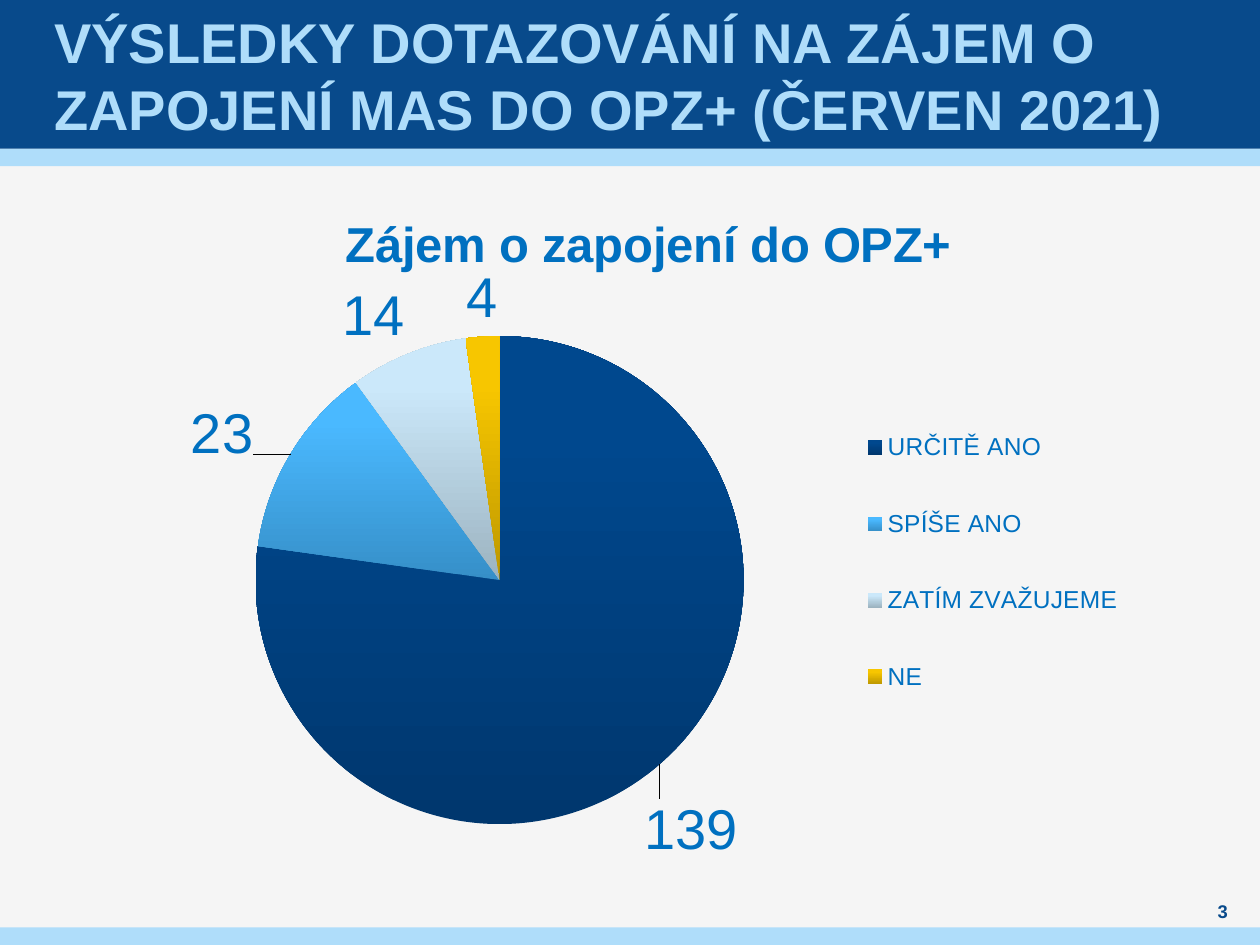
from pptx import Presentation
from pptx.chart.data import CategoryChartData
from pptx.dml.color import RGBColor
from pptx.enum.chart import XL_CHART_TYPE, XL_LABEL_POSITION, XL_LEGEND_POSITION
from pptx.enum.shapes import MSO_SHAPE
from pptx.enum.text import MSO_ANCHOR, MSO_AUTO_SIZE, PP_ALIGN
from pptx.oxml import parse_xml
from pptx.oxml.ns import nsdecls, qn
from pptx.util import Inches, Pt

PIE = XL_CHART_TYPE.PIE
OUTSIDE_END = XL_LABEL_POSITION.OUTSIDE_END
LEGEND_BOTTOM = XL_LEGEND_POSITION.BOTTOM
RECTANGLE = MSO_SHAPE.RECTANGLE
MIDDLE = MSO_ANCHOR.MIDDLE
NO_AUTOFIT = MSO_AUTO_SIZE.NONE
LEFT, CENTER = PP_ALIGN.LEFT, PP_ALIGN.CENTER

FONT = "Arial"
COLORS = {
    "background": "F5F5F5",
    "navy": "084A8B",
    "sky": "AFDDFA",
    "chart_text": "0070C0",
}
# Category, value, gradient from bottom to top
ANSWERS = [
    ("URČITĚ ANO", 139, ("00376E", "00488E")),
    ("SPÍŠE ANO", 23, ("368FC8", "4AB9FF")),
    ("ZATÍM ZVAŽUJEME", 14, ("9CB3C0", "CBE8FA")),
    ("NE", 4, ("BE9800", "F7C600")),
]
# Shift of single labels, as a share of the chart size
LABEL_SHIFTS = {0: (-0.02, 0.04), 1: (-0.03, 0.02)}


def style_font(font, size, color, bold=False):
    font.name = FONT
    font.size = Pt(size)
    font.bold = bold
    font.color.rgb = RGBColor.from_string(color)


def add_band(slide, top, height, color):
    band = slide.shapes.add_shape(RECTANGLE, 0, Inches(top), Inches(10), Inches(height))
    band.shadow.inherit = False
    band.fill.solid()
    band.fill.fore_color.rgb = RGBColor.from_string(color)
    band.line.fill.background()


def write_text(shape, text, size, color, alignment, side_margin=0):
    frame = shape.text_frame
    frame.text = text
    frame.word_wrap = True
    frame.auto_size = NO_AUTOFIT
    frame.vertical_anchor = MIDDLE
    frame.margin_left = frame.margin_right = Inches(side_margin)
    frame.margin_top = frame.margin_bottom = 0
    paragraph = frame.paragraphs[0]
    paragraph.alignment = alignment
    style_font(paragraph.runs[0].font, size, color, bold=True)


def place_title(slide, text):
    title = slide.shapes.title
    title.left, title.top = Inches(0.39), 0
    title.width, title.height = Inches(9.21), Inches(1.18)
    write_text(title, text, 32, COLORS["sky"], LEFT, 0.04)
    # Bring the title in front of the bands
    slide.shapes._spTree.append(title._element)


def add_page_number(slide, number):
    box = slide.shapes.add_textbox(Inches(9.45), Inches(7.13), Inches(0.51), Inches(0.2))
    write_text(box, number, 10.5, COLORS["navy"], CENTER)


def set_layout(element, index, x, y, width=None, height=None, inner=False, shift=False):
    """Give a chart part a manual layout in shares of the chart size."""
    for old_layout in element.findall(qn("c:layout")):
        element.remove(old_layout)
    settings = [("layoutTarget", "inner")] if inner else []
    if not shift:
        settings += [("xMode", "edge"), ("yMode", "edge")]
    settings += [("x", x), ("y", y)]
    if width is not None:
        settings += [("w", width), ("h", height)]
    children = "".join(f'<c:{tag} val="{value}"/>' for tag, value in settings)
    element.insert(index, parse_xml(
        f'<c:layout {nsdecls("c")}><c:manualLayout>{children}</c:manualLayout></c:layout>'))


def fill_slice(point, gradient):
    fill = point.format.fill
    fill.gradient()
    fill.gradient_angle = 90
    for stop, position, color in zip(fill.gradient_stops, (0, 0.8), gradient):
        stop.position = position
        stop.color.rgb = RGBColor.from_string(color)
    point.format.line.fill.background()


def label_slices(series):
    labels = series.data_labels
    labels.show_value = True
    labels.position = OUTSIDE_END
    style_font(labels.font, 32, COLORS["chart_text"])
    for index, (x, y) in LABEL_SHIFTS.items():
        label = series.points[index].data_label
        label.position = OUTSIDE_END
        style_font(label.font, 32, COLORS["chart_text"])
        element = series._element.xpath(f"c:dLbls/c:dLbl[c:idx/@val='{index}']")[0]
        set_layout(element, 1, x, y, shift=True)


def add_interest_chart(slide):
    categories, values, gradients = zip(*ANSWERS)
    chart_data = CategoryChartData()
    chart_data.categories = categories
    chart_data.add_series("Series 1", values)
    chart = slide.shapes.add_chart(
        PIE, Inches(1.14), Inches(1.39), Inches(8.07), Inches(5.74), chart_data).chart
    style_font(chart.font, 10, COLORS["navy"])

    # Chart title
    chart.has_title = True
    title = chart.chart_title
    title.text_frame.text = "Zájem o zapojení do OPZ+"
    style_font(title.text_frame.paragraphs[0].runs[0].font, 28, COLORS["chart_text"], bold=True)
    set_layout(title._element, 1, 0.19, 0.04)

    # Legend
    chart.has_legend = True
    legend = chart.legend
    legend.position = LEGEND_BOTTOM
    legend.include_in_layout = False
    style_font(legend.font, 14, COLORS["chart_text"])
    set_layout(legend._element, 1, 0.7, 0.29, 0.27, 0.49)

    # Slices and labels
    plot = chart.plots[0]
    plot.vary_by_categories = True
    set_layout(plot._element.getparent(), 0, 0.11, 0.22, 0.48, 0.68, inner=True)
    series = plot.series[0]
    for index, gradient in enumerate(gradients):
        fill_slice(series.points[index], gradient)
    label_slices(series)


def main():
    presentation = Presentation()
    presentation.slide_width, presentation.slide_height = Inches(10), Inches(7.5)
    slide = presentation.slides.add_slide(presentation.slide_layouts[5])
    background = slide.background.fill
    background.solid()
    background.fore_color.rgb = RGBColor.from_string(COLORS["background"])

    # Header and footer bands
    add_band(slide, 1.18, 0.14, COLORS["sky"])
    add_band(slide, 0, 1.18, COLORS["navy"])
    add_band(slide, 7.36, 0.14, COLORS["sky"])

    place_title(slide, "VÝSLEDKY DOTAZOVÁNÍ NA ZÁJEM O ZAPOJENÍ MAS DO OPZ+ (ČERVEN 2021)")
    add_page_number(slide, "3")
    add_interest_chart(slide)
    presentation.save("out.pptx")


if __name__ == "__main__":
    main()
